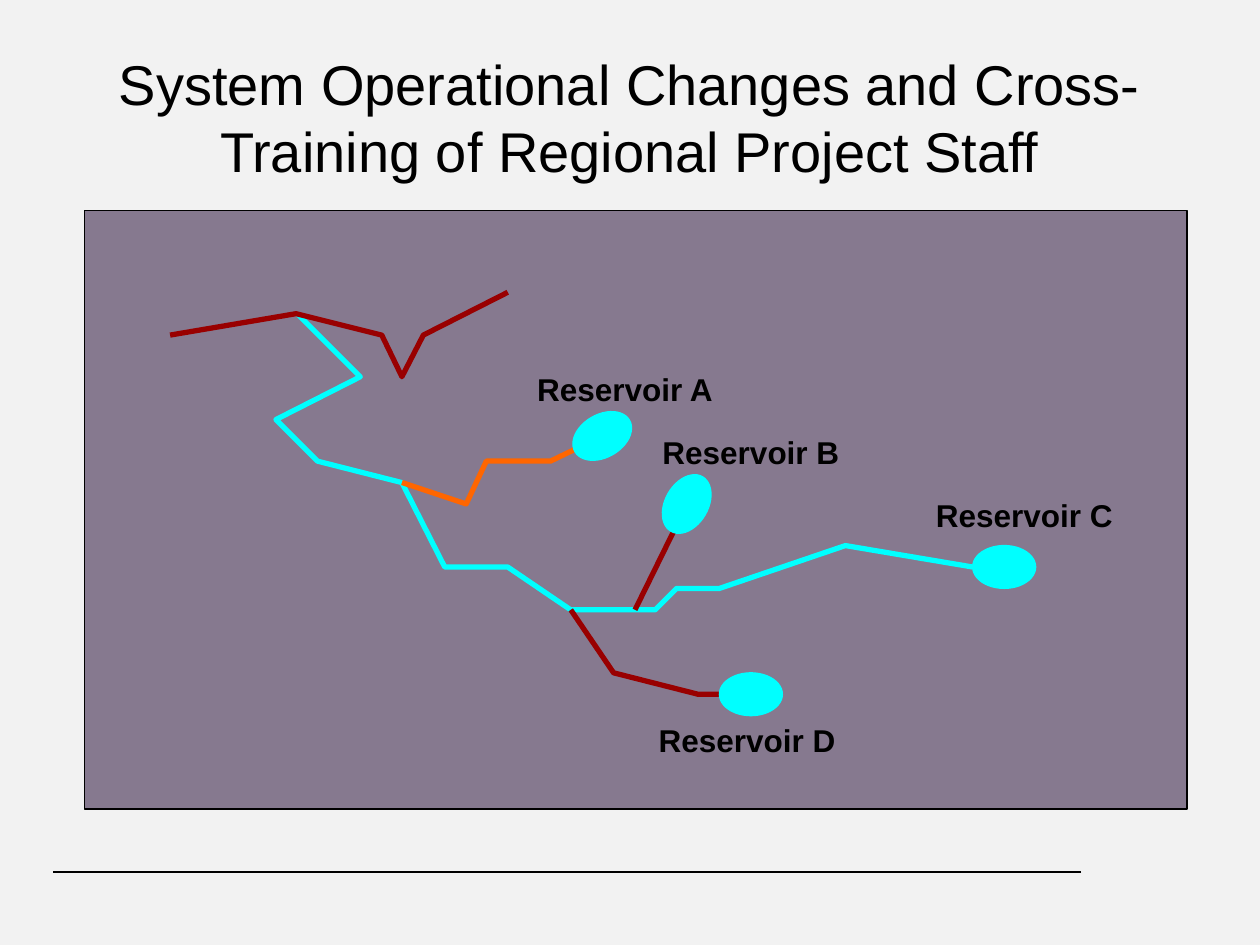
from lxml import etree
from pptx import Presentation
from pptx.dml.color import RGBColor
from pptx.enum.shapes import MSO_CONNECTOR, MSO_SHAPE
from pptx.enum.text import MSO_ANCHOR, PP_ALIGN
from pptx.oxml.ns import qn
from pptx.util import Inches, Pt

STRAIGHT = MSO_CONNECTOR.STRAIGHT
RECT, OVAL = MSO_SHAPE.RECTANGLE, MSO_SHAPE.OVAL
MIDDLE, TOP = MSO_ANCHOR.MIDDLE, MSO_ANCHOR.TOP
CENTER = PP_ALIGN.CENTER

BLACK = RGBColor(0x00, 0x00, 0x00)
PAPER = RGBColor(0xF2, 0xF2, 0xF2)
PANEL = RGBColor(0x86, 0x79, 0x8F)
CYAN = RGBColor(0x00, 0xFF, 0xFF)
RED = RGBColor(0x99, 0x00, 0x00)
ORANGE = RGBColor(0xFF, 0x66, 0x00)

RIVERS = [
    (CYAN, [(7.72, 4.5), (6.71, 4.33), (5.71, 4.67), (5.37, 4.67), (5.2, 4.84),
            (4.53, 4.84), (4.03, 4.5), (3.53, 4.5), (3.19, 3.83), (2.52, 3.66),
            (2.19, 3.33), (2.86, 2.99), (2.36, 2.49)]),
    (RED, [(5.71, 5.51), (5.54, 5.51), (4.87, 5.34), (4.53, 4.84)]),
    (ORANGE, [(4.7, 3.5), (4.37, 3.66), (3.86, 3.66), (3.7, 4), (3.19, 3.83)]),
    (RED, [(4.03, 2.32), (3.36, 2.66), (3.19, 2.99), (3.03, 2.66),
           (2.35, 2.49), (1.35, 2.66)]),
]
RESERVOIRS = [
    ("Reservoir A", (4.53, 3.29), 330, (4.03, 2.89)),
    ("Reservoir B", (5.2, 3.83), 300, (5.03, 3.39)),
    ("Reservoir C", (7.72, 4.33), 0, (7.2, 3.89)),
    ("Reservoir D", (5.71, 5.34), 0, (5, 5.67)),
]


class SlideBuilder:
    font = "Arial"
    thin, river_width = Pt(0.75), Pt(3)

    def __init__(self, slide):
        self.slide = slide
        self.shapes = slide.shapes
        fill = slide.background.fill
        fill.solid()
        fill.fore_color.rgb = PAPER

    def set_text(self, sp, text, anchor, size, bold):
        tf = sp.text_frame
        tf.word_wrap = True
        tf.vertical_anchor = anchor
        p = tf.paragraphs[0]
        p.alignment = CENTER
        r = p.add_run()
        r.text = text
        style = {"name": self.font, "size": Pt(size), "bold": bold}
        for key, value in style.items():
            setattr(r.font, key, value)
        r.font.color.rgb = BLACK

    def title(self, text, x, y, w, h):
        sp = self.shapes.title
        box = {"left": x, "top": y, "width": w, "height": h}
        for key, value in box.items():
            setattr(sp, key, Inches(value))
        self.set_text(sp, text, MIDDLE, 32, False)

    def label(self, text, x, y):
        sp = self.shapes.add_textbox(Inches(x), Inches(y), Inches(1.86), Inches(0.4))
        self.set_text(sp, text, TOP, 18, True)

    def stroke(self, sp, color, width):
        sp.line.color.rgb = color
        sp.line.width = width

    def shape(self, kind, x, y, w, h, fill, line, rotation=0):
        sp = self.shapes.add_shape(kind, Inches(x), Inches(y), Inches(w), Inches(h))
        sp.shadow.inherit = False
        sp.rotation = rotation
        sp.fill.solid()
        sp.fill.fore_color.rgb = fill
        self.stroke(sp, line, self.thin)

    def line(self, x1, y1, x2, y2, color, width):
        sp = self.shapes.add_connector(
            STRAIGHT, Inches(x1), Inches(y1), Inches(x2), Inches(y2))
        self.stroke(sp, color, width)
        etree.SubElement(sp._element.spPr, qn("a:effectLst"))

    def river(self, color, points):
        start, *rest = [(Inches(x), Inches(y)) for x, y in points]
        builder = self.shapes.build_freeform(*start)
        builder.add_line_segments(rest, close=False)
        sp = builder.convert_to_shape()
        sp.shadow.inherit = False
        sp.fill.background()
        self.stroke(sp, color, self.river_width)


def main():
    prs = Presentation()
    prs.slide_width, prs.slide_height = Inches(10), Inches(7.5)
    s = SlideBuilder(prs.slides.add_slide(prs.slide_layouts[5]))
    s.title("System Operational Changes and Cross-Training of Regional Project Staff",
            0.5, 0.3, 9, 1.25)
    s.line(8.58, 6.92, 0.42, 6.92, BLACK, s.thin)
    s.shape(RECT, 0.67, 1.67, 8.75, 4.75, PANEL, BLACK)
    for color, points in RIVERS:
        s.river(color, points)
    s.line(5.37, 4.17, 5.04, 4.84, RED, s.river_width)
    for name, (x, y), rotation, label_at in RESERVOIRS:
        s.shape(OVAL, x, y, 0.5, 0.34, CYAN, CYAN, rotation)
        s.label(name, *label_at)
    prs.save("out.pptx")


if __name__ == "__main__":
    main()
